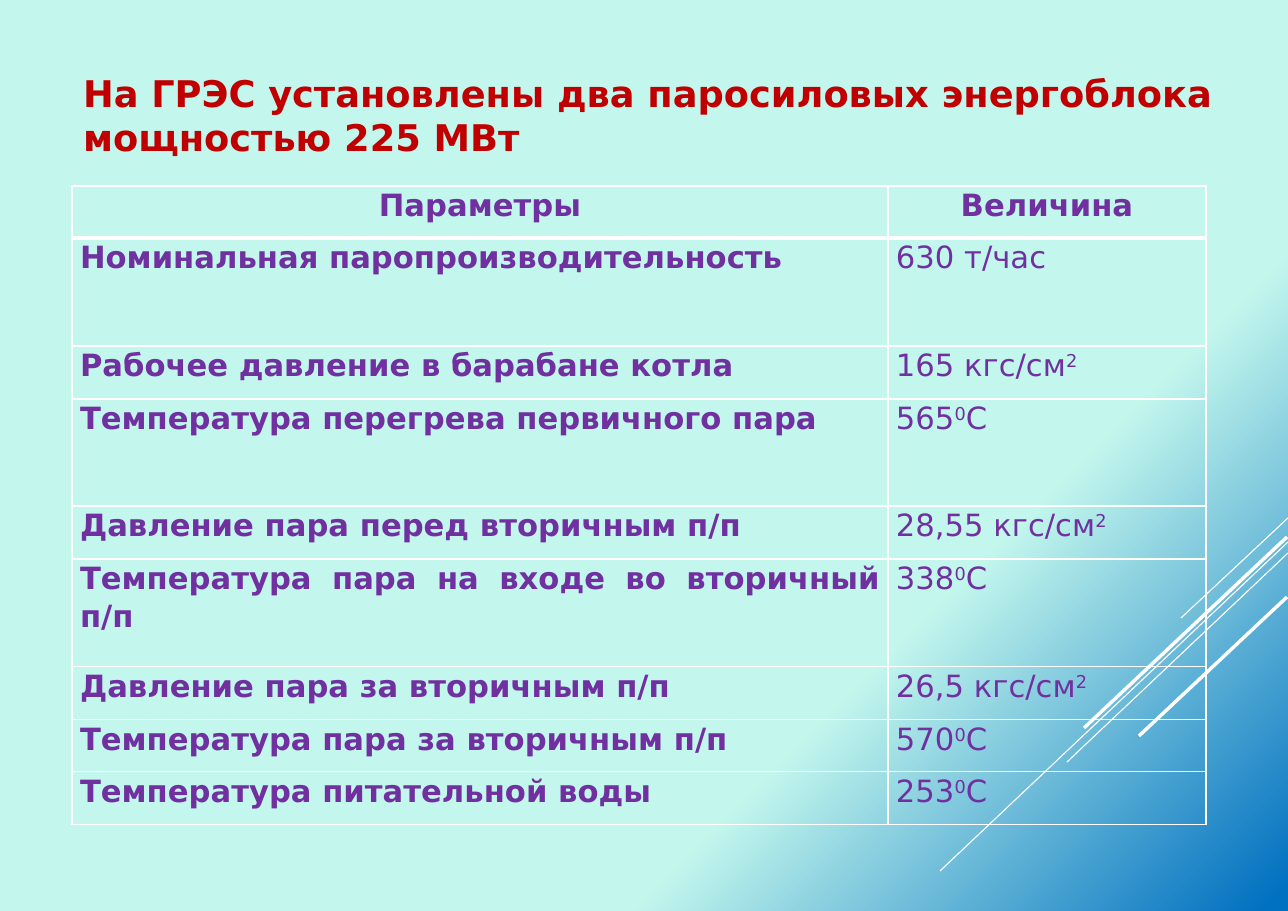
from lxml.etree import SubElement
from pptx import Presentation
from pptx.dml.color import RGBColor
from pptx.enum.shapes import MSO_CONNECTOR as Connector
from pptx.enum.text import MSO_ANCHOR as Anchor, MSO_AUTO_SIZE as AutoSize, PP_ALIGN as Align
from pptx.oxml.ns import qn
from pptx.util import Pt

PX = 8298
FONT = "DejaVu Sans"
COLORS = {
    "mint": "C3F7ED",
    "blue": "0070C0",
    "white": "FFFFFF",
    "red": "C00000",
    "purple": "7030A0",
}


def add_text(para, text, size=20, color="purple", bold=False, raised=False):
    span = para.add_run()
    span.text = text
    span.font.name = FONT
    span.font.size = Pt(size)
    span.font.bold = bold
    span.font.color.rgb = RGBColor.from_string(COLORS[color])
    if raised:
        span._r.get_or_add_rPr().set("baseline", "30000")


def add_border(cell, side, width):
    line = SubElement(cell._tc.get_or_add_tcPr(), qn(f"a:ln{side}"), w=str(Pt(width)))
    fill = SubElement(line, qn("a:solidFill"))
    SubElement(fill, qn("a:srgbClr"), val=COLORS["white"])


deck = Presentation()
deck.slide_width = 1288 * PX
deck.slide_height = 911 * PX
page = deck.slides.add_slide(deck.slide_layouts[5])

backdrop = page.background.fill
backdrop.gradient()
backdrop.gradient_angle = 315
for stop, color, position in zip(backdrop.gradient_stops, ["mint", "blue"], [0.7, 0.99]):
    stop.color.rgb = RGBColor.from_string(COLORS[color])
    stop.position = position

rays = [
    (1288, 518, 1181, 618, 0.75),
    (1288, 542, 940, 871, 0.75),
    (1288, 553, 1067, 762, 0.75),
    (1287, 537, 1084, 728, 2.25),
    (1287, 597, 1139, 736, 2.25),
]
for *ends, width in rays:
    ray = page.shapes.add_connector(Connector.STRAIGHT, *[end * PX for end in ends])
    ray.line.color.rgb = RGBColor.from_string(COLORS["white"])
    ray.line.width = Pt(width)
    SubElement(ray._element.spPr, qn("a:effectLst"))

title = page.shapes.title
title.left, title.top, title.width, title.height = 72 * PX, 53 * PX, 1192 * PX, 123 * PX
title.text_frame.word_wrap = True
title.text_frame.auto_size = AutoSize.NONE
title.text_frame.vertical_anchor = Anchor.MIDDLE
heading = title.text_frame.paragraphs[0]
heading.alignment = Align.LEFT
add_text(heading, "На ГРЭС установлены два паросиловых энергоблока мощностью 225 МВт",
         size=24, color="red", bold=True)

rows = [
    ("Параметры", ["Величина"]),
    ("Номинальная паропроизводительность", ["630 т/час"]),
    ("Рабочее давление в барабане котла", ["165 кгс/см", "2"]),
    ("Температура перегрева первичного пара", ["565", "0", "С"]),
    ("Давление пара перед вторичным п/п", ["28,55 кгс/см", "2"]),
    ("Температура пара на входе во вторичный п/п", ["338", "0", "С"]),
    ("Давление пара за вторичным п/п", ["26,5 кгс/см", "2"]),
    ("Температура пара за вторичным п/п", ["570", "0", "С"]),
    ("Температура питательной воды", ["253", "0", "С"]),
]
row_edges = [186, 238, 346, 399, 506, 559, 667, 720, 772, 825]
column_widths = [816, 318]

frame = page.shapes.add_table(
    len(rows), 2, 72 * PX, row_edges[0] * PX,
    sum(column_widths) * PX, (row_edges[-1] - row_edges[0]) * PX)
table = frame.table
table.first_row = False
table.horz_banding = False
for column, width in zip(table.columns, column_widths):
    column.width = width * PX

for row_index, (parameter, value) in enumerate(rows):
    is_header = row_index == 0
    table.rows[row_index].height = (row_edges[row_index + 1] - row_edges[row_index]) * PX
    for column_index, pieces in enumerate([[parameter], value]):
        cell = table.cell(row_index, column_index)
        cell.margin_left = cell.margin_right = 8 * PX
        cell.margin_top = cell.margin_bottom = 0
        add_border(cell, "L", 1)
        add_border(cell, "R", 1)
        add_border(cell, "T", 3 if row_index == 1 else 1)
        add_border(cell, "B", 3 if is_header else 1)
        cell.fill.background()
        para = cell.text_frame.paragraphs[0]
        para.alignment = Align.CENTER if is_header else Align.JUSTIFY
        para.line_spacing = 1.07
        para.space_after = Pt(8)
        for piece_index, piece in enumerate(pieces):
            add_text(para, piece, bold=is_header or column_index == 0, raised=piece_index == 1)

deck.save("out.pptx")
